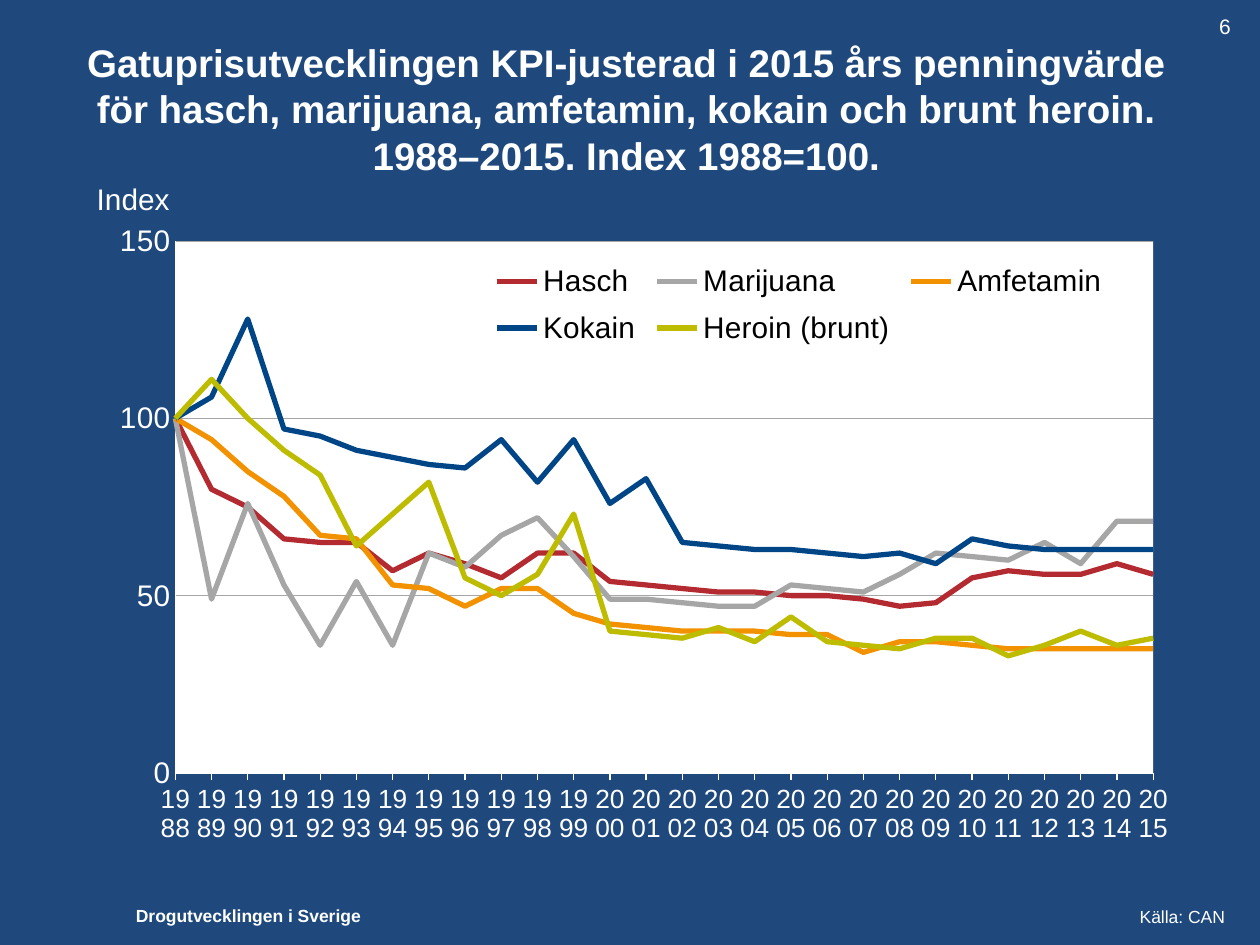
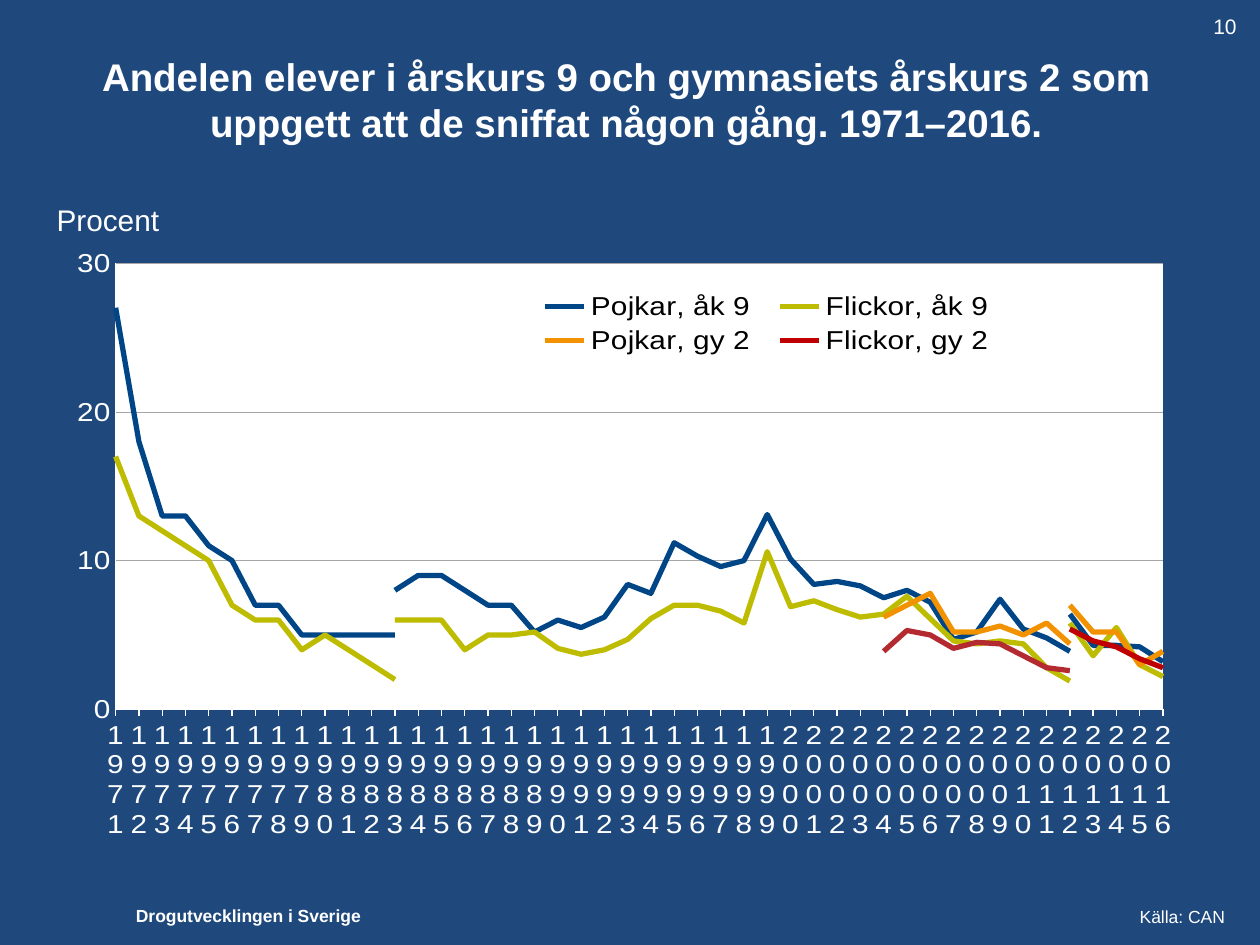
from lxml.etree import SubElement
from pptx import Presentation
from pptx.chart.data import CategoryChartData
from pptx.dml.color import RGBColor
from pptx.enum.chart import XL_CHART_TYPE, XL_LEGEND_POSITION, XL_MARKER_STYLE, XL_TICK_MARK
from pptx.enum.text import MSO_ANCHOR, PP_ALIGN
from pptx.oxml import parse_xml
from pptx.oxml.ns import qn
from pptx.util import Pt

NAVY = RGBColor(0x1F, 0x49, 0x7D)
WHITE = RGBColor(0xFF, 0xFF, 0xFF)
BLACK = RGBColor(0x00, 0x00, 0x00)
GRAY = RGBColor(0xA6, 0xA6, 0xA6)
RED = RGBColor(0xB3, 0x2B, 0x31)
DARK_RED = RGBColor(0xC0, 0x00, 0x00)
ORANGE = RGBColor(0xF2, 0x92, 0x00)
BLUE = RGBColor(0x00, 0x46, 0x87)
OLIVE = RGBColor(0xBE, 0xBC, 0x00)
FONT = "Arial"
NS = ('xmlns:c="http://schemas.openxmlformats.org/drawingml/2006/chart" '
      'xmlns:a="http://schemas.openxmlformats.org/drawingml/2006/main"')


def add_text(s, text, box, size, bold=False, align=PP_ALIGN.LEFT,
             anchor=MSO_ANCHOR.TOP):
    tf = s.shapes.add_textbox(*[Pt(v) for v in box]).text_frame
    tf.word_wrap = True
    tf.vertical_anchor = anchor
    p = tf.paragraphs[0]
    p.alignment = align
    r = p.add_run()
    r.text = text
    r.font.name = FONT
    r.font.size = Pt(size)
    r.font.bold = bold
    r.font.color.rgb = WHITE


def make_layout(box, inner=False):
    target = '<c:layoutTarget val="inner"/>' if inner else ""
    x, y, w, h = box
    return parse_xml(
        f'<c:layout {NS}><c:manualLayout>{target}'
        '<c:xMode val="edge"/><c:yMode val="edge"/>'
        f'<c:x val="{x}"/><c:y val="{y}"/><c:w val="{w}"/><c:h val="{h}"/>'
        '</c:manualLayout></c:layout>')


# Each series is a name, a colour and runs of values keyed by their first year
price_series = [
    ("Hasch", RED, {1988: [
        100, 80, 75, 66, 65, 65, 57, 62, 59, 55, 62, 62, 54, 53, 52, 51, 51, 50,
        50, 49, 47, 48, 55, 57, 56, 56, 59, 56]}),
    ("Marijuana", GRAY, {1988: [
        100, 49, 76, 53, 36, 54, 36, 62, 58, 67, 72, 61, 49, 49, 48, 47, 47, 53,
        52, 51, 56, 62, 61, 60, 65, 59, 71, 71]}),
    ("Amfetamin", ORANGE, {1988: [
        100, 94, 85, 78, 67, 66, 53, 52, 47, 52, 52, 45, 42, 41, 40, 40, 40, 39,
        39, 34, 37, 37, 36, 35, 35, 35, 35, 35]}),
    ("Kokain", BLUE, {1988: [
        100, 106, 128, 97, 95, 91, 89, 87, 86, 94, 82, 94, 76, 83, 65, 64, 63, 63,
        62, 61, 62, 59, 66, 64, 63, 63, 63, 63]}),
    ("Heroin (brunt)", OLIVE, {1988: [
        100, 111, 100, 91, 84, 64, 73, 82, 55, 50, 56, 73, 40, 39, 38, 41, 37, 44,
        37, 36, 35, 38, 38, 33, 36, 40, 36, 38]}),
]
sniff_series = [
    ("Pojkar, åk 9", BLUE, {
        1971: [27, 18, 13, 13, 11, 10, 7, 7, 5, 5, 5, 5, 5],
        2012: [6.4, 4.3, 4.3, 4.2, 3.2]}),
    ("Series 2", BLUE, {1983: [
        8, 9, 9, 8, 7, 7, 5.2, 6, 5.5, 6.2, 8.4, 7.8, 11.2, 10.3, 9.6, 10, 13.1,
        10.1, 8.4, 8.6, 8.3, 7.5, 8, 7.2, 4.7, 5.2, 7.4, 5.4, 4.8, 3.9]}),
    ("Flickor, åk 9", OLIVE, {
        1971: [17, 13, 12, 11, 10, 7, 6, 6, 4, 5, 4, 3, 2],
        2012: [5.8, 3.6, 5.5, 3, 2.2]}),
    ("Series 4", OLIVE, {1983: [
        6, 6, 6, 4, 5, 5, 5.2, 4.1, 3.7, 4, 4.7, 6.1, 7, 7, 6.6, 5.8, 10.6, 6.9,
        7.3, 6.7, 6.2, 6.4, 7.6, 6.1, 4.6, 4.4, 4.6, 4.4, 2.8, 1.9]}),
    ("Series 5", ORANGE, {2012: [7, 5.2, 5.2, 3, 3.9]}),
    ("Pojkar, gy 2", ORANGE, {2004: [6.2, 7, 7.8, 5.2, 5.2, 5.6, 5, 5.8, 4.4]}),
    ("Flickor, gy 2", DARK_RED, {2012: [5.4, 4.6, 4.2, 3.4, 2.8]}),
    ("Series 8", RED, {2004: [3.9, 5.3, 5, 4.1, 4.5, 4.4, 3.6, 2.8, 2.6]}),
]

slides = [
    dict(title="Gatuprisutvecklingen KPI-justerad i 2015 års penningvärde för hasch, "
               "marijuana, amfetamin, kokain och brunt heroin. "
               "1988–2015. Index 1988=100.",
         title_box=(34, 22, 648, 80), number="6",
         unit="Index", unit_box=(48.2, 99.4, 90, 28),
         years=range(1988, 2016), series=price_series, hidden=[],
         chart_box=(50.4, 126, 630, 356.4), top=150, step=50, year_size=15,
         plot=(0.079, 0.033, 0.887, 0.853), legend=(0.36, 0.05, 0.57, 0.17)),
    dict(title="Andelen elever i årskurs 9 och gymnasiets årskurs 2 som uppgett att "
               "de sniffat någon gång. 1971–2016.",
         title_box=(34, 11.5, 648, 90), number="10",
         unit="Procent", unit_box=(25.2, 111.6, 90, 28),
         years=range(1971, 2017), series=sniff_series, hidden=[1, 3, 4, 7],
         chart_box=(34, 129, 641.5, 350.6), top=30, step=10, year_size=17,
         plot=(0.05, 0.07, 0.933, 0.834), legend=(0.415, 0.115, 0.43, 0.135)),
]

prs = Presentation()
prs.slide_width, prs.slide_height = Pt(720), Pt(540)
fill = prs.slide_master.background.fill
fill.solid()
fill.fore_color.rgb = NAVY

for d in slides:
    s = prs.slides.add_slide(prs.slide_layouts[6])

    # Footer, title, page number and source
    add_text(s, "Drogutvecklingen i Sverige", (70.6, 513.4, 180, 19.4), 10, True)
    add_text(s, d["title"], d["title_box"], 22, True, PP_ALIGN.CENTER,
             MSO_ANCHOR.MIDDLE)
    add_text(s, d["number"], (683, 4.3, 34, 21.6), 12, align=PP_ALIGN.CENTER)
    add_text(s, "Källa: CAN", (607, 514.4, 100, 19.4), 10, align=PP_ALIGN.RIGHT)

    # Line chart
    data = CategoryChartData()
    data.categories = [str(y) for y in d["years"]]
    for name, color, runs in d["series"]:
        by_year = {start + i: v for start, vals in runs.items()
                   for i, v in enumerate(vals)}
        data.add_series(name, [by_year.get(y) for y in d["years"]])
    chart = s.shapes.add_chart(XL_CHART_TYPE.LINE,
                               *[Pt(v) for v in d["chart_box"]], data).chart
    chart.has_title = False
    chart.font.name = FONT
    chart.font.size = Pt(17)
    chart.font.bold = False
    chart.font.color.rgb = WHITE
    chart.plots[0].vary_by_categories = False
    for ser, (name, color, runs) in zip(chart.plots[0].series, d["series"]):
        ser.smooth = False
        ser.marker.style = XL_MARKER_STYLE.NONE
        ser.format.line.width = Pt(3)
        ser.format.line.color.rgb = color

    # Axes
    cat, val = chart.category_axis, chart.value_axis
    for axis, size, width, tick in (
            (cat, d["year_size"], 0.75, XL_TICK_MARK.OUTSIDE),
            (val, 17, 0.25, XL_TICK_MARK.NONE)):
        axis.major_tick_mark = tick
        axis.minor_tick_mark = XL_TICK_MARK.NONE
        axis.format.line.color.rgb = WHITE
        axis.format.line.width = Pt(width)
        font = axis.tick_labels.font
        font.name = FONT
        font.size = Pt(size)
        font.bold = False
        font.color.rgb = WHITE
    val.minimum_scale, val.maximum_scale = 0, d["top"]
    val.major_unit = d["step"]
    val.tick_labels.number_format = "0"
    val.tick_labels.number_format_is_linked = False
    val.has_major_gridlines = True
    val.major_gridlines.format.line.color.rgb = GRAY
    val.major_gridlines.format.line.width = Pt(0.25)

    # Lines start on the axis, and every year is labelled upright
    cross = val._element.find(qn("c:crossBetween"))
    if cross is None:
        cross = parse_xml(f'<c:crossBetween {NS}/>')
        val._element.find(qn("c:majorUnit")).addprevious(cross)
    cross.set("val", "midCat")
    body = cat._element.find(qn("c:txPr")).find(qn("a:bodyPr"))
    body.set("rot", "0")
    body.set("vert", "horz")
    last = cat._element.find(qn("c:noMultiLvlLbl"))
    for tag in ("tickLblSkip", "tickMarkSkip"):
        last.addprevious(parse_xml(f'<c:{tag} {NS} val="1"/>'))

    # White plot area
    area = chart._chartSpace.chart.plotArea
    for old in area.findall(qn("c:layout")):
        area.remove(old)
    area.insert(0, make_layout(d["plot"], inner=True))
    area.append(parse_xml(f'<c:spPr {NS}><a:solidFill><a:srgbClr val="{WHITE}"/>'
                          '</a:solidFill><a:ln><a:noFill/></a:ln></c:spPr>'))

    # Legend inside the plot, one entry per group
    chart.has_legend = True
    legend = chart.legend
    legend.position = XL_LEGEND_POSITION.TOP
    legend.include_in_layout = False
    legend.font.name = FONT
    legend.font.size = Pt(17)
    legend.font.bold = False
    legend.font.color.rgb = BLACK
    box = legend._element
    for old in box.findall(qn("c:layout")):
        box.remove(old)
    overlay = box.find(qn("c:overlay"))
    for i in d["hidden"]:
        entry = parse_xml(f'<c:legendEntry {NS}><c:idx val="{i}"/></c:legendEntry>')
        SubElement(entry, qn("c:delete")).set("val", "1")
        overlay.addprevious(entry)
    overlay.addprevious(make_layout(d["legend"]))

    # Unit above the value axis
    add_text(s, d["unit"], d["unit_box"], 17, anchor=MSO_ANCHOR.MIDDLE)

prs.save("out.pptx")
